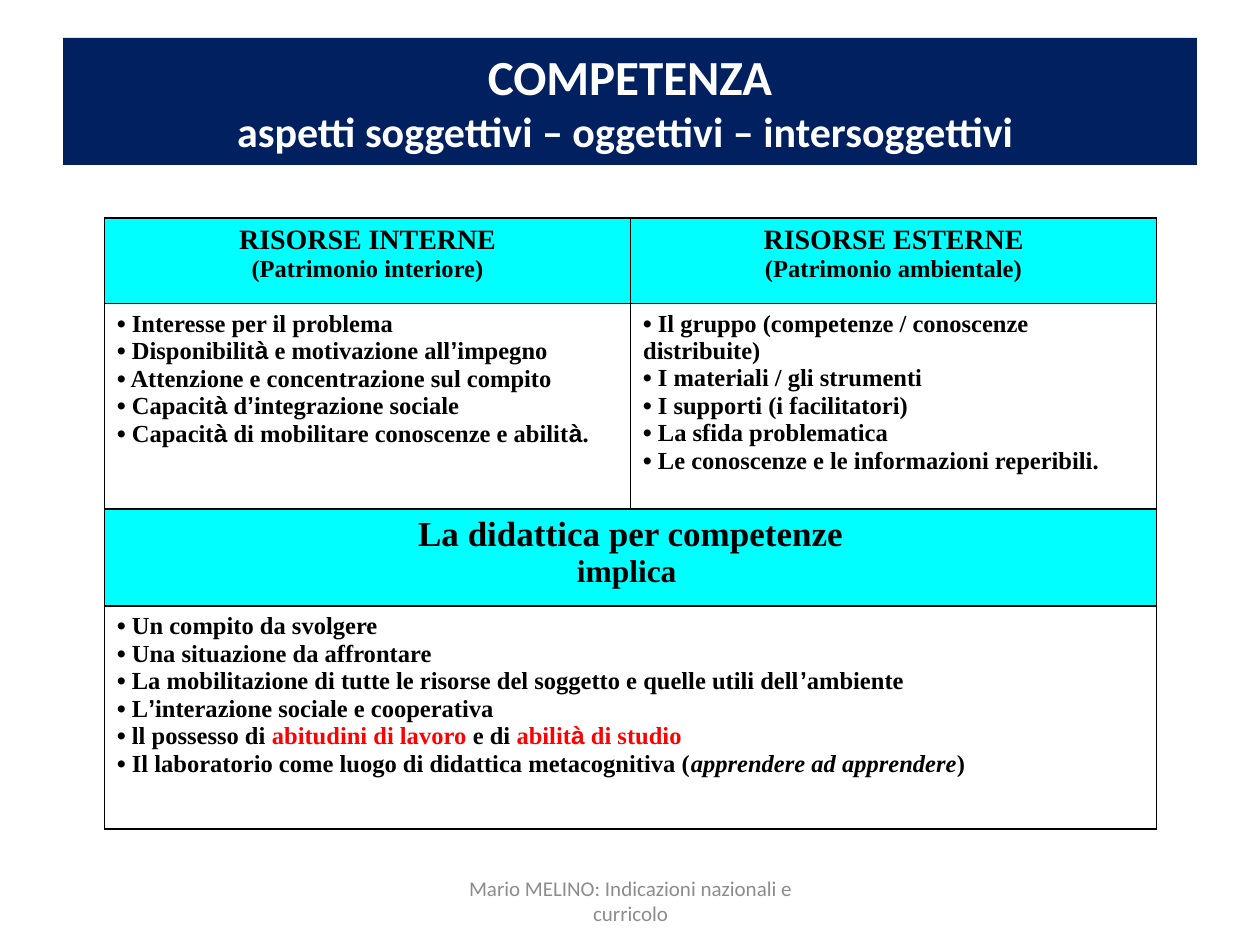
from itertools import groupby

from lxml import etree
from pptx import Presentation
from pptx import util as u
from pptx.dml.color import RGBColor
from pptx.enum import text
from pptx.oxml.ns import qn

COLORS = {"navy": "002060", "cyan": "00FFFF", "black": "000000",
          "white": "FFFFFF", "red": "FF0000", "gray": "8C8C8C"}
SERIF, SYMBOL, SANS = "Times New Roman", "Arial", "Calibri"
SYMBOLS = "•à’"
BODY_SIZE = 14

TITLE = [("COMPETENZA", 28),
         ("aspetti soggettivi – oggettivi – intersoggettivi ", 24)]
FOOTER = "Mario MELINO: Indicazioni nazionali e curricolo"

INTERNAL = ["Interesse per il problema",
            "Disponibilità e motivazione all’impegno",
            "Attenzione e concentrazione sul compito",
            "Capacità d’integrazione sociale",
            "Capacità di mobilitare conoscenze e abilità."]
EXTERNAL = ["Il gruppo (competenze / conoscenze distribuite)",
            "I materiali / gli strumenti",
            "I supporti (i facilitatori)",
            "La sfida problematica",
            "Le conoscenze e le informazioni reperibili."]
IMPLICATIONS = ["Un compito da svolgere",
                "Una situazione da affrontare",
                "La mobilitazione di tutte le risorse del soggetto e quelle utili dell’ambiente",
                "L’interazione sociale e cooperativa",
                [("ll possesso di ", "plain"), ("abitudini di lavoro ", "red"),
                 ("e di ", "plain"), ("abilità di studio", "red")],
                [("Il laboratorio come luogo di didattica metacognitiva (", "plain"),
                 ("apprendere ad apprendere", "italic"), (")", "plain")]]

HEADINGS = {(0, 0): [("RISORSE INTERNE", 16), ("(Patrimonio interiore)", 14)],
            (0, 1): [("RISORSE ESTERNE", 16), ("(Patrimonio ambientale)", 14)],
            (2, 0): [("La didattica per competenze", 20), ("implica ", 18)]}
LISTS = {(1, 0): INTERNAL, (1, 1): EXTERNAL, (3, 0): IMPLICATIONS}
MERGED_ROWS = (2, 3)
ROW_HEIGHTS = (0.68, 1.63, 0.77, 1.77)
TABLE_LEFT, TABLE_TOP, TABLE_WIDTH = 0.83, 1.73, 8.35


def color(name):
    return RGBColor.from_string(COLORS[name])


def add_run(paragraph, words, size, font, fill, bold=True, italic=False):
    run = paragraph.add_run()
    run.text = words
    run.font.size = u.Pt(size)
    run.font.name = font
    run.font.bold = bold
    run.font.italic = italic
    run.font.color.rgb = color(fill)


def add_cell_text(paragraph, words, size, style="plain"):
    fill = "red" if style == "red" else "black"
    for is_symbol, letters in groupby(words, lambda letter: letter in SYMBOLS):
        add_run(paragraph, "".join(letters), size, SYMBOL if is_symbol else SERIF,
                fill, italic=style == "italic")


def next_paragraph(frame, index):
    return frame.add_paragraph() if index else frame.paragraphs[0]


def set_borders(cell):
    properties = cell._tc.get_or_add_tcPr()
    for side in ("lnL", "lnR", "lnT", "lnB"):
        line = etree.SubElement(properties, qn(f"a:{side}"), w=str(u.Pt(1)))
        fill = etree.SubElement(line, qn("a:solidFill"))
        etree.SubElement(fill, qn("a:srgbClr"), val=COLORS["black"])


def add_title(slide):
    title = slide.shapes.title
    title.left, title.top = u.Inches(0.5), u.Inches(0.3)
    title.width, title.height = u.Inches(9), u.Inches(1.01)
    title.fill.solid()
    title.fill.fore_color.rgb = color("navy")
    frame = title.text_frame
    frame.auto_size = text.MSO_AUTO_SIZE.NONE
    frame.vertical_anchor = text.MSO_ANCHOR.MIDDLE
    paragraph = frame.paragraphs[0]
    paragraph.alignment = text.PP_ALIGN.CENTER
    for index, (words, size) in enumerate(TITLE):
        if index:
            paragraph.add_line_break()
        add_run(paragraph, words, size, SANS, "white")


def add_resources_table(slide):
    table = slide.shapes.add_table(
        len(ROW_HEIGHTS), 2, u.Inches(TABLE_LEFT), u.Inches(TABLE_TOP),
        u.Inches(TABLE_WIDTH), u.Inches(sum(ROW_HEIGHTS))).table
    table.first_row = table.horz_banding = False
    for row, height in zip(table.rows, ROW_HEIGHTS):
        row.height = u.Inches(height)
    for row in MERGED_ROWS:
        table.cell(row, 0).merge(table.cell(row, 1))
    for cell in table.iter_cells():
        set_borders(cell)
        cell.fill.background()
    for position, lines in HEADINGS.items():
        cell = table.cell(*position)
        cell.fill.solid()
        cell.fill.fore_color.rgb = color("cyan")
        for index, (words, size) in enumerate(lines):
            paragraph = next_paragraph(cell.text_frame, index)
            paragraph.alignment = text.PP_ALIGN.CENTER
            add_cell_text(paragraph, words, size)
    for position, items in LISTS.items():
        frame = table.cell(*position).text_frame
        for index, item in enumerate(items):
            paragraph = next_paragraph(frame, index)
            parts = [(item, "plain")] if isinstance(item, str) else item
            add_cell_text(paragraph, "• ", BODY_SIZE)
            for words, style in parts:
                add_cell_text(paragraph, words, BODY_SIZE, style)


def add_footer(slide):
    footer = slide.shapes.add_textbox(u.Inches(3.42), u.Inches(6.95),
                                      u.Inches(3.17), u.Inches(0.4))
    frame = footer.text_frame
    frame.word_wrap = True
    frame.vertical_anchor = text.MSO_ANCHOR.MIDDLE
    paragraph = frame.paragraphs[0]
    paragraph.alignment = text.PP_ALIGN.CENTER
    add_run(paragraph, FOOTER, 12, SANS, "gray", bold=False)


def main():
    presentation = Presentation()
    presentation.slide_width, presentation.slide_height = u.Inches(10), u.Inches(7.5)
    slide = presentation.slides.add_slide(presentation.slide_layouts.get_by_name("Title Only"))
    add_title(slide)
    add_resources_table(slide)
    add_footer(slide)
    presentation.save("out.pptx")


if __name__ == "__main__":
    main()
